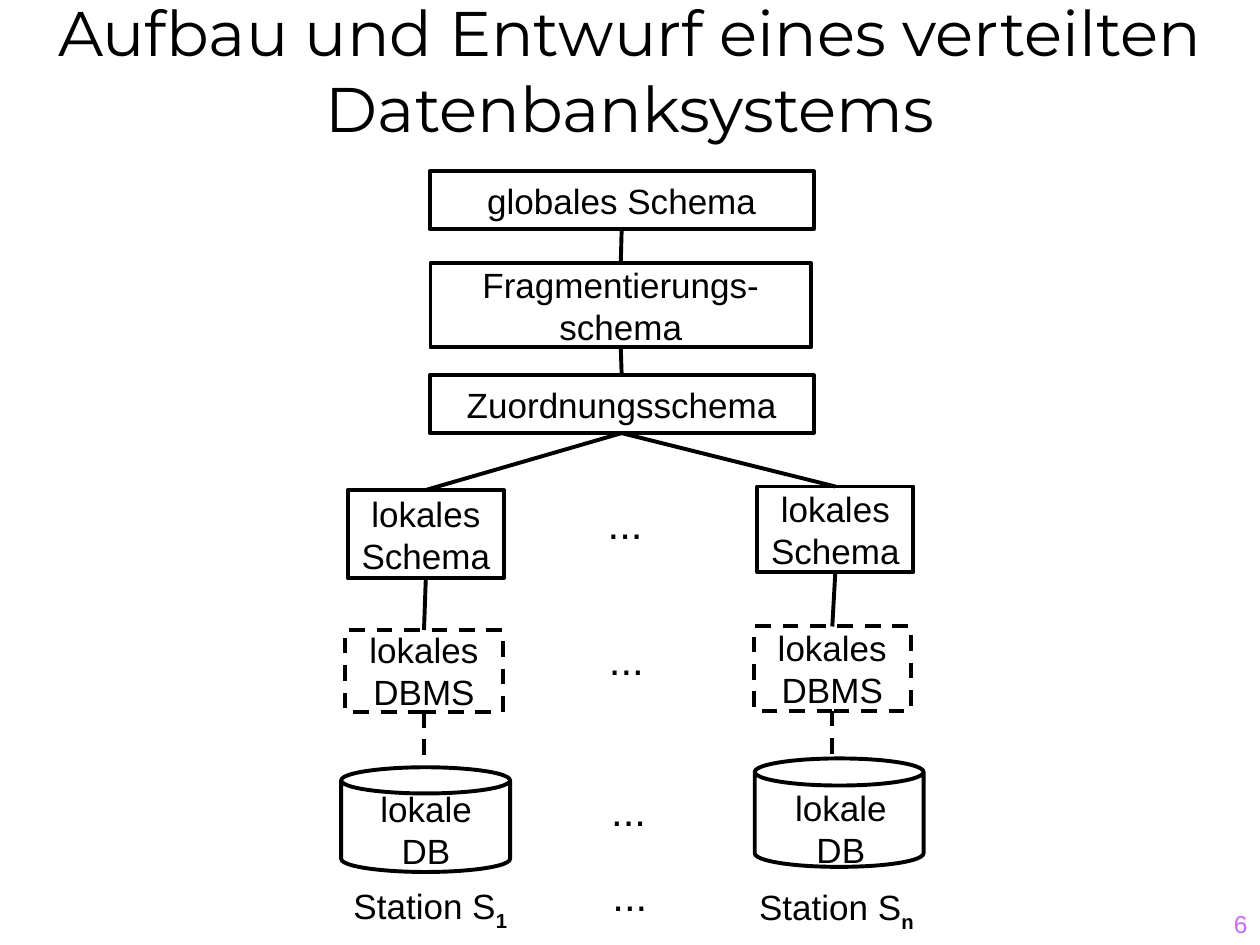
from dataclasses import dataclass
from itertools import pairwise

from lxml.etree import SubElement
from pptx import Presentation
from pptx.dml.color import RGBColor
from pptx.enum.dml import MSO_LINE
from pptx.enum.shapes import MSO_CONNECTOR as Link, MSO_SHAPE as Preset
from pptx.enum.text import MSO_ANCHOR as Anchor, MSO_AUTO_SIZE as Fit, PP_ALIGN as Align
from pptx.oxml.ns import qn
from pptx.util import Pt


@dataclass(frozen=True)
class Theme:
    """Colours, fonts and sizes of the slide."""
    ink: RGBColor = RGBColor(0, 0, 0)
    paper: RGBColor = RGBColor(255, 255, 255)
    accent: RGBColor = RGBColor(0xCC, 0x66, 0xFF)
    heading_font: str = "Montserrat"
    body_font: str = "Arial"
    heading: float = 36
    body: float = 20
    dots: float = 24
    page: float = 14
    stroke: float = 2.25


THEME = Theme()
TOP, BOTTOM = 0, 2
SCHEMA_LEVELS = [
    ("globales Schema", (0, 0, 219.5, 33)),
    ("Fragmentierungs-\nschema", (0.5, 52.5, 217.5, 48)),
    ("Zuordnungsschema", (0, 116.5, 219.5, 33)),
]
STATIONS = [
    ("1", (195, 280), {
        "schema": (3.7, 0, 89.3, 50.4), "dbms": (2.3, 80, 90, 46.8),
        "store": (0, 158.5, 96.5, 59.8), "store_text": (15, 166.4, 67, 55.4),
        "label": (-0.6, 222, 103, 31)}),
    ("n", (431, 278), {
        "schema": (1.7, 0, 89.3, 49), "dbms": (-0.4, 80, 90, 48.2),
        "store": (0.3, 155.4, 96.5, 62), "store_text": (16, 167.7, 67, 55.4),
        "label": (-4.8, 224.6, 103.7, 31)}),
]
DOTS = [(0, 0), (0.7, 77.8), (2, 164.2), (2.7, 212.4)]


def apply(target, formats):
    """Set each attribute of the target from a dict."""
    for name, value in formats.items():
        setattr(target, name, value)


def place(origin, part):
    """Turn a part's offset and size into absolute lengths."""
    left, top, width, height = part
    return Pt(origin[0] + left), Pt(origin[1] + top), Pt(width), Pt(height)


def write(shape, text, frame_formats, size=THEME.body, font=THEME.body_font,
          color=THEME.ink, align=Align.CENTER):
    """Fill a shape with one paragraph for each line of text."""
    frame = shape.text_frame
    frame.text = text
    apply(frame, frame_formats)
    for paragraph in frame.paragraphs:
        paragraph.alignment = align
        apply(paragraph.runs[0].font, {"name": font, "size": Pt(size)})
        paragraph.runs[0].font.color.rgb = color
    return frame


def draw_stroke(line, dashed):
    """Give an outline or connector its colour, width and dash."""
    line.color.rgb = THEME.ink
    line.width = Pt(THEME.stroke)
    if dashed:
        line.dash_style = MSO_LINE.DASH


def add_node(slide, bounds, text="", preset=Preset.RECTANGLE, dashed=False):
    """Add an outlined node with centred text."""
    node = slide.shapes.add_shape(preset, *bounds)
    node.shadow.inherit = False
    node.fill.solid()
    node.fill.fore_color.rgb = THEME.paper
    draw_stroke(node.line, dashed)
    if text:
        write(node, text, {"word_wrap": False, "vertical_anchor": Anchor.MIDDLE})
    return node


def add_text(slide, bounds, text, size=THEME.body):
    """Add an unwrapped text box that fits its text."""
    box = slide.shapes.add_textbox(*bounds)
    return write(box, text, {"word_wrap": False, "auto_size": Fit.SHAPE_TO_FIT_TEXT}, size)


def add_link(slide, upper, lower, dashed=False):
    """Connect a node's bottom to the top of the node below."""
    center = upper.left + upper.width // 2
    link = slide.shapes.add_connector(
        Link.STRAIGHT, center, upper.top + upper.height, center, lower.top)
    link.begin_connect(upper, BOTTOM)
    if lower.auto_shape_type == Preset.RECTANGLE:
        link.end_connect(lower, TOP)
    draw_stroke(link.line, dashed)
    SubElement(link._element.spPr, qn("a:effectLst"))


def add_title(slide, bounds):
    """Place and format the title."""
    title = slide.shapes.title
    apply(title, dict(zip(("left", "top", "width", "height"), bounds)))
    write(title, "Aufbau und Entwurf eines verteilten Datenbanksystems",
          {"word_wrap": True, "auto_size": Fit.NONE, "vertical_anchor": Anchor.BOTTOM},
          THEME.heading, THEME.heading_font)


def add_global_schemas(slide, origin):
    """Stack the global schema levels and return the lowest."""
    levels = [add_node(slide, place(origin, part), text) for text, part in SCHEMA_LEVELS]
    for upper, lower in pairwise(levels):
        add_link(slide, upper, lower)
    return levels[-1]


def add_station(slide, origin, parts, index, allocation):
    """Build one station below the allocation schema."""
    bounds = {name: place(origin, part) for name, part in parts.items()}
    schema = add_node(slide, bounds["schema"], "lokales\nSchema")
    dbms = add_node(slide, bounds["dbms"], "lokales\nDBMS", dashed=True)
    store = add_node(slide, bounds["store"], preset=Preset.CAN)
    add_text(slide, bounds["store_text"], "lokale\nDB")
    label = add_text(slide, bounds["label"], "Station S")
    subscript = label.paragraphs[0].add_run()
    subscript.text = index
    apply(subscript.font, {"name": THEME.body_font, "size": Pt(THEME.body), "bold": True})
    subscript.font.color.rgb = THEME.ink
    subscript._r.get_or_add_rPr().set("baseline", "-25000")
    add_link(slide, allocation, schema)
    add_link(slide, schema, dbms)
    add_link(slide, dbms, store, dashed=True)


def add_dots(slide, origin):
    """Mark the omitted stations at each level."""
    for left, top in DOTS:
        add_text(slide, place(origin, (left, top, 34.5, 36)), "...", THEME.dots)


def add_page_number(slide, bounds):
    """Write the page number in the lower right corner."""
    write(slide.shapes.add_textbox(*bounds), "6",
          {"word_wrap": True, "vertical_anchor": Anchor.BOTTOM},
          THEME.page, color=THEME.accent, align=Align.RIGHT)


def main():
    """Build and save the slide."""
    deck = Presentation()
    apply(deck, {"slide_width": Pt(720), "slide_height": Pt(540)})
    slide = deck.slides.add_slide(deck.slide_layouts[5])
    add_title(slide, (Pt(0), Pt(0), Pt(720), Pt(86.4)))
    allocation = add_global_schemas(slide, (245.5, 98))
    for index, origin, parts in STATIONS:
        add_station(slide, origin, parts, index, allocation)
    add_dots(slide, (340, 280.8))
    add_page_number(slide, (Pt(570), Pt(504), Pt(150), Pt(36)))
    deck.save("out.pptx")


if __name__ == "__main__":
    main()
